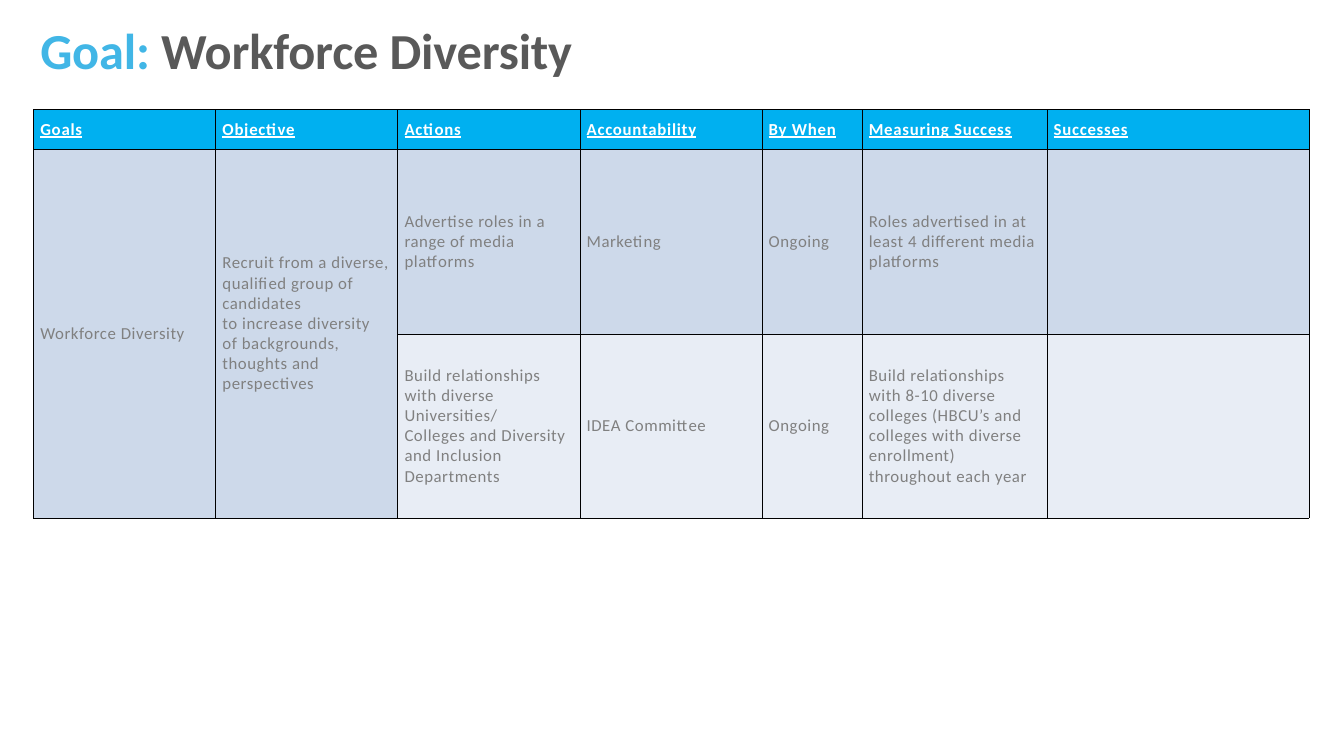
"""Build a workforce diversity goal slide with an action plan table."""
from lxml import etree
from pptx import Presentation
from pptx.dml.color import RGBColor
from pptx.enum.text import MSO_ANCHOR, MSO_AUTO_SIZE, PP_ALIGN
from pptx.oxml.ns import qn
from pptx.util import Inches, Pt

TOP, MIDDLE = MSO_ANCHOR.TOP, MSO_ANCHOR.MIDDLE
LEFT = PP_ALIGN.LEFT
GROW = MSO_AUTO_SIZE.SHAPE_TO_FIT_TEXT
SIDES = ("left", "top", "right", "bottom")

COLUMN_WIDTHS = [2.71, 2.71, 2.71, 2.71, 1.49, 2.75, 3.9]
ROW_HEIGHTS = [0.6, 2.74, 2.74]
ROW_FILLS = ["00B0F0", "CDD9EA", "E8EDF5"]
PLAN = [
    ["Goals", "Objective", "Actions", "Accountability", "By When",
     "Measuring Success", "Successes"],
    ["Workforce Diversity",
     "Recruit from a diverse, qualified group of candidates\n"
     "to increase diversity\n"
     "of backgrounds, thoughts and perspectives",
     "Advertise roles in a range of media platforms", "Marketing", "Ongoing",
     "Roles advertised in at least 4 different media platforms", ""],
    ["", "",
     "Build relationships with diverse Universities/\n"
     "Colleges and Diversity and Inclusion Departments",
     "IDEA Committee", "Ongoing",
     "Build relationships with 8-10 diverse colleges (HBCU’s and colleges "
     "with diverse enrollment) throughout each year", ""],
]


def rgb(value):
    return RGBColor.from_string(value)


class GoalSlide:
    title_font = {"name": "Calibri", "size": Pt(54), "bold": True}
    header_font = {"name": "Calibri", "size": Pt(18), "bold": True, "underline": True}
    body_font = {"name": "Calibri", "size": Pt(18), "bold": False}

    def __init__(self, presentation):
        self.slide = presentation.slides.add_slide(presentation.slide_layouts[5])

    def run(self, paragraph, words, font, color, spacing):
        run = paragraph.add_run()
        run.text = words
        for name, value in font.items():
            setattr(run.font, name, value)
        run.font.color.rgb = rgb(color)
        run.font._element.set("spc", str(round(spacing * 100)))

    def title(self, left, top, width, height, parts):
        heading = self.slide.shapes.title
        bounds = {"left": left, "top": top, "width": width, "height": height}
        for name, value in bounds.items():
            setattr(heading, name, Inches(value))
        frame = heading.text_frame
        layout = {"word_wrap": True, "auto_size": GROW, "vertical_anchor": TOP}
        layout.update({f"margin_{side}": 0 for side in SIDES})
        for name, value in layout.items():
            setattr(frame, name, value)
        paragraph = frame.paragraphs[0]
        paragraph.alignment = LEFT
        paragraph.line_spacing = Pt(64.8)
        for words, color in parts:
            self.run(paragraph, words, self.title_font, color, -0.2)

    def borders(self, cell):
        properties = cell._tc.get_or_add_tcPr()
        for index, side in enumerate("LRTB"):
            line = etree.Element(qn(f"a:ln{side}"), w=str(Pt(1)))
            fill = etree.SubElement(line, qn("a:solidFill"))
            etree.SubElement(fill, qn("a:srgbClr"), val="000000")
            properties.insert(index, line)

    def cell(self, cell, words, fill, font, color, spacing):
        cell.fill.solid()
        cell.fill.fore_color.rgb = rgb(fill)
        cell.vertical_anchor = MIDDLE
        for side in SIDES:
            setattr(cell, f"margin_{side}", Inches(0.1))
        self.borders(cell)
        frame = cell.text_frame
        for index, line in enumerate(words.split("\n") if words else []):
            paragraph = frame.add_paragraph() if index else frame.paragraphs[0]
            paragraph.line_spacing = Pt(21.6)
            self.run(paragraph, line, font, color, spacing)

    def table(self, left, top, rows):
        table = self.slide.shapes.add_table(
            len(ROW_HEIGHTS), len(COLUMN_WIDTHS), Inches(left), Inches(top),
            Inches(sum(COLUMN_WIDTHS)), Inches(sum(ROW_HEIGHTS))).table
        for column, width in zip(table.columns, COLUMN_WIDTHS):
            column.width = Inches(width)
        for row, height in zip(table.rows, ROW_HEIGHTS):
            row.height = Inches(height)
        for r, entries in enumerate(rows):
            style = (self.body_font, "808080", 0.6) if r else (self.header_font, "FFFFFF", 0.8)
            for c, words in enumerate(entries):
                fill = ROW_FILLS[min(r, 1) if c < 2 else r]
                self.cell(table.cell(r, c), words, fill, *style)
        for c in range(2):
            table.cell(1, c).merge(table.cell(2, c))
        table.cell(1, 1).margin_bottom = Inches(0.4)


def main():
    presentation = Presentation()
    presentation.slide_width = Inches(20)
    presentation.slide_height = Inches(11.25)
    goal = GoalSlide(presentation)
    goal.title(0.6, 0.28, 16.89, 1.1,
               [("Goal: ", "41B6E6"), ("Workforce Diversity", "595959")])
    goal.table(0.5, 1.63, PLAN)
    presentation.save("out.pptx")


if __name__ == "__main__":
    main()
